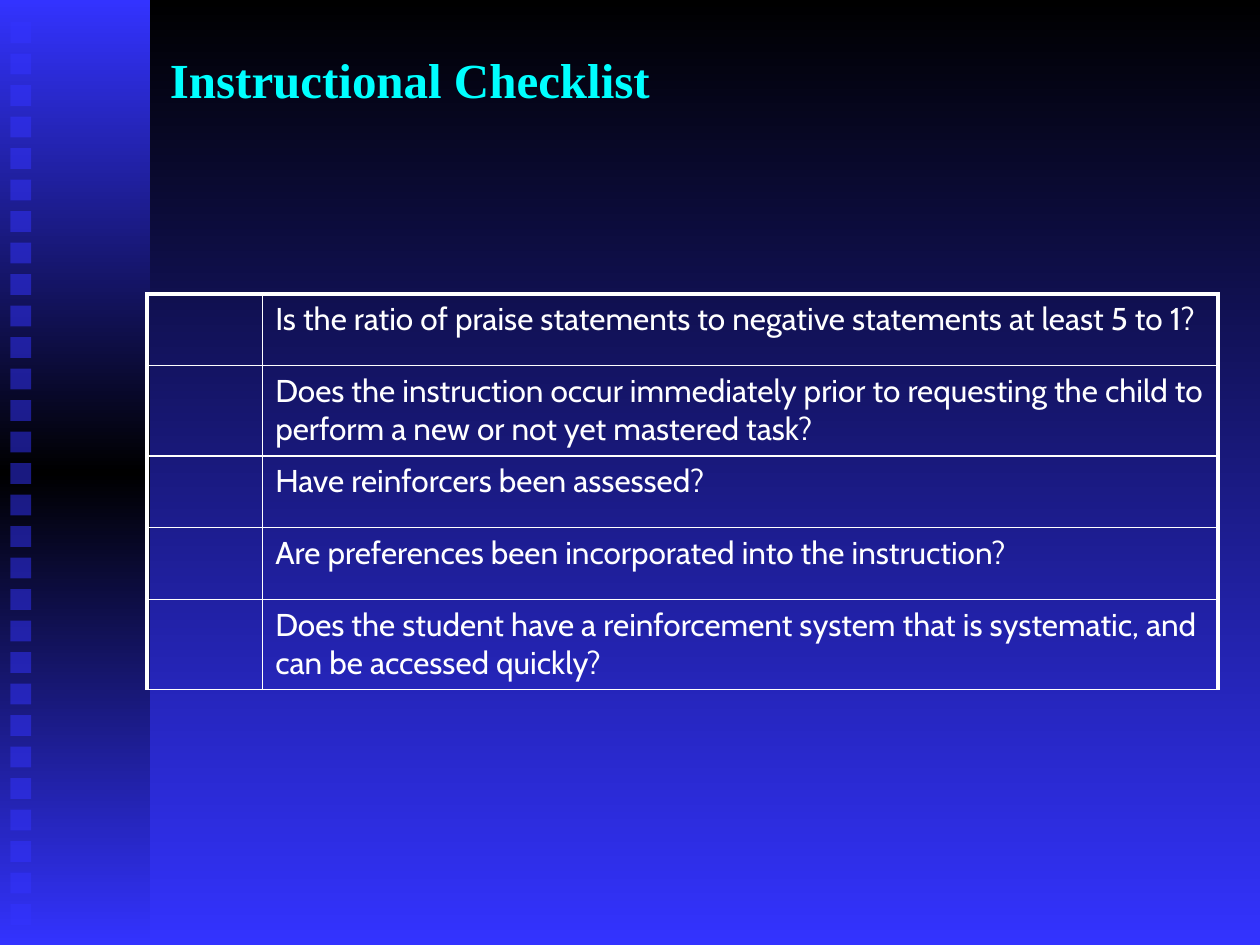
import copy

import lxml.etree
import pptx
import pptx.dml.color
import pptx.enum.shapes
import pptx.enum.text
import pptx.oxml.ns
import pptx.util

RGBColor = pptx.dml.color.RGBColor
BLACK = RGBColor(0x00, 0x00, 0x00)
BLUE = RGBColor(0x33, 0x33, 0xFF)
CYAN = RGBColor(0x00, 0xFF, 0xFF)
WHITE = RGBColor(0xFF, 0xFF, 0xFF)

CELL = 0.25  # inches per grid column and row
SQUARE_ROWS = 29
THIN, THICK = 1, 2.25
ONE_LINE, TWO_LINES = 2.28, 2.86  # table row heights in grid rows

CHECKLIST = [
    ("Is the ratio of praise statements to negative statements at least 5 to 1?", ONE_LINE),
    ("Does the instruction occur immediately prior to requesting the child to "
     "perform a new or not yet mastered task?", TWO_LINES),
    ("Have reinforcers been assessed?", ONE_LINE),
    ("Are preferences been incorporated into the instruction?", ONE_LINE),
    ("Does the student have a reinforcement system that is systematic, and "
     "can be accessed quickly?", TWO_LINES),
]


def grid(n):
    return pptx.util.Inches(n * CELL)


def add_child(parent, tag, **attributes):
    return lxml.etree.SubElement(parent, pptx.oxml.ns.qn(tag), attributes)


class SlideBuilder:
    """Holds the style and the current slide; lengths are grid units."""

    title_font, body_font = "Times New Roman", "Cabin"
    title_size, body_size = 28, 18

    def __init__(self, prs):
        self.slide = prs.slides.add_slide(prs.slide_layouts[6])

    def gradient(self, fill, owner, colors):
        """Fill from top to bottom with evenly spaced colours."""
        fill.gradient()
        fill.gradient_angle = 270
        stop_list = next(owner.iter(pptx.oxml.ns.qn("a:gsLst")))
        for _ in colors[2:]:
            stop_list.append(copy.deepcopy(stop_list[-1]))
        for i, (stop, color) in enumerate(zip(fill.gradient_stops, colors)):
            stop.color.rgb = color
            stop.position = i / (len(colors) - 1)

    def background(self, colors):
        self.gradient(self.slide.background.fill, self.slide.element, colors)

    def rectangle(self, left, top, width, height):
        sp = self.slide.shapes.add_shape(
            pptx.enum.shapes.MSO_SHAPE.RECTANGLE,
            grid(left), grid(top), grid(width), grid(height))
        sp.shadow.inherit = False
        sp.line.fill.background()
        return sp

    def band(self, left, top, width, height, colors):
        sp = self.rectangle(left, top, width, height)
        self.gradient(sp.fill, sp.element, colors)

    def square(self, left, top, side, color, opacity):
        sp = self.rectangle(left, top, side, side)
        sp.fill.solid()
        sp.fill.fore_color.rgb = color
        rgb = next(sp.element.spPr.iter(pptx.oxml.ns.qn("a:srgbClr")))
        add_child(rgb, "a:alpha", val=str(opacity * 1000))

    def run(self, p, text, font, size, color, bold=False):
        r = p.add_run()
        r.text = text
        r.font.name, r.font.size, r.font.bold = font, pptx.util.Pt(size), bold
        r.font.color.rgb = color

    def title(self, left, top, width, height, text):
        box = self.slide.shapes.add_textbox(grid(left), grid(top), grid(width), grid(height))
        tf = box.text_frame
        tf.word_wrap = True
        tf.vertical_anchor = pptx.enum.text.MSO_ANCHOR.MIDDLE
        self.run(tf.paragraphs[0], text, self.title_font, self.title_size, CYAN, True)

    def borders(self, cell, widths):
        """Draw white borders; widths are points for left, right, top, bottom."""
        tc_pr = cell._tc.get_or_add_tcPr()
        for i, (side, width) in enumerate(zip("LRTB", widths)):
            ln = add_child(tc_pr, f"a:ln{side}", w=str(pptx.util.Pt(width)))
            add_child(add_child(ln, "a:solidFill"), "a:srgbClr", val=str(WHITE))
            tc_pr.insert(i, ln)

    def checklist(self, left, top, col_widths, items):
        """Add a table with an empty tick column beside the questions."""
        heights = [height for _, height in items]
        table = self.slide.shapes.add_table(
            len(items), len(col_widths), grid(left), grid(top),
            grid(sum(col_widths)), grid(sum(heights))).table
        table.first_row = table.horz_banding = False
        for column, width in zip(table.columns, col_widths):
            column.width = grid(width)
        for i, (text, height) in enumerate(items):
            table.rows[i].height = grid(height)
            top_width = THICK if i == 0 else THIN
            tick, question = table.rows[i].cells
            for cell, sides in ((tick, (THICK, THIN)), (question, (THIN, THICK))):
                cell.fill.background()
                self.borders(cell, (*sides, top_width, THIN))
            tick.text_frame.paragraphs[0].font.size = pptx.util.Pt(self.body_size)
            self.run(question.text_frame.paragraphs[0], text,
                     self.body_font, self.body_size, WHITE)


def main():
    prs = pptx.Presentation()
    prs.slide_width, prs.slide_height = grid(40), grid(30)
    page = SlideBuilder(prs)
    page.background([BLACK, BLUE])
    page.band(0, 0, 4.76, 30, [BLUE, BLACK, BLUE])
    for row in range(SQUARE_ROWS):
        page.square(0.33, 0.7 + row, 0.66, BLUE, 50)
    page.title(5, 1, 29.68, 3, "Instructional Checklist")
    page.checklist(4.67, 9.33, (3.67, 30.33), CHECKLIST)
    prs.save("out.pptx")


if __name__ == "__main__":
    main()
